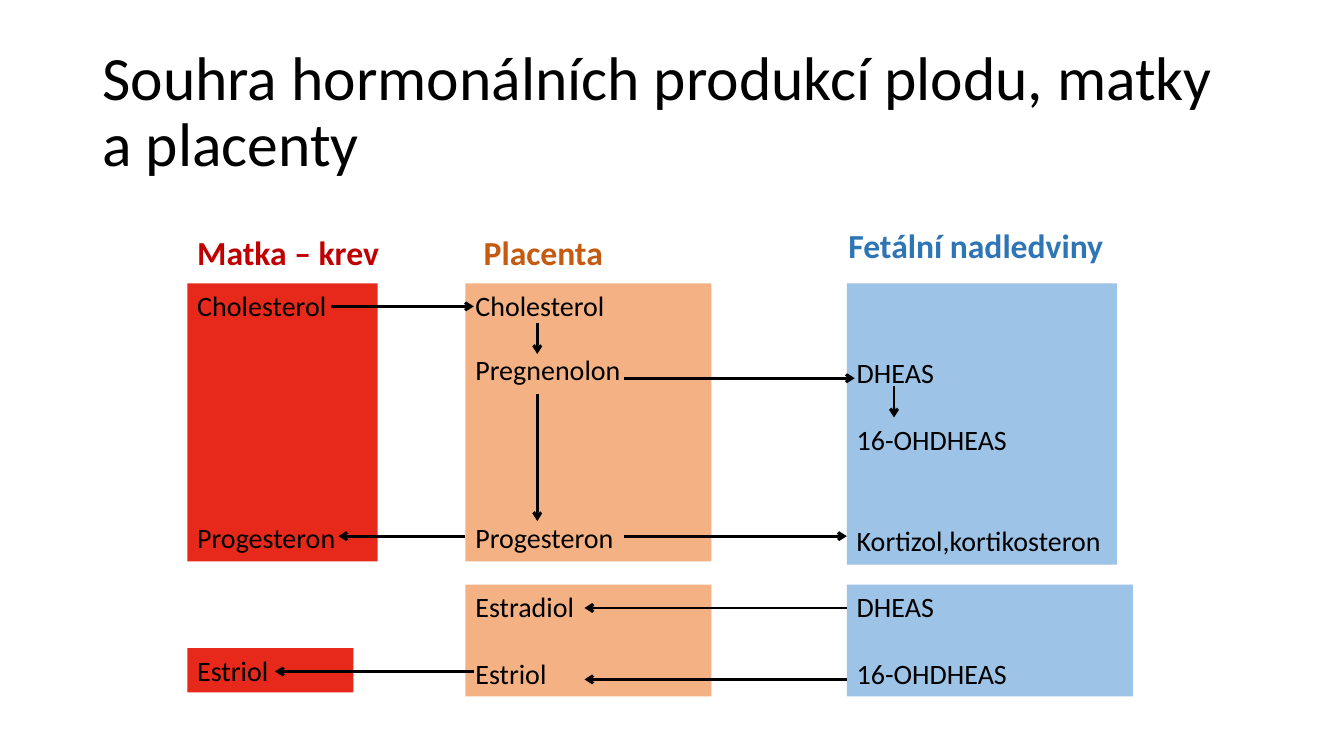
from dataclasses import dataclass

import pptx
import pptx.util
import pptx.dml.color
import pptx.enum.shapes
import pptx.enum.text
import pptx.oxml.ns
from lxml import etree

Cm = pptx.util.Cm
Pt = pptx.util.Pt


@dataclass(frozen=True)
class Theme:
    font: str = "Calibri"
    title_size: int = 44
    heading_size: int = 24
    body_size: int = 20
    line_width: int = 2
    line_pitch: int = 24
    black: str = "000000"
    mother: str = "E6291A"
    mother_heading: str = "C00000"
    placenta: str = "F4B183"
    placenta_heading: str = "C55A11"
    fetus: str = "9DC3E6"
    fetus_heading: str = "2E75B6"


THEME = Theme()

# Columns: left edges in cm
MOTHER, PLACENTA, FETUS = 4.72, 11.73, 21.34
UPPER, LOWER = 7.14, 14.73

# Heading: text, left, top, width, colour
HEADINGS = [
    ("Matka – krev", MOTHER, 5.72, 6.81, THEME.mother_heading),
    ("Placenta", 11.94, 5.72, 4.39, THEME.placenta_heading),
    ("Fetální nadledviny", 21.13, 5.54, 7.01, THEME.fetus_heading),
]

# Compartment: left, top, width, height, colour, hormones as (free lines above, name)
COMPARTMENTS = [
    (PLACENTA, UPPER, 6.2, 7.01, THEME.placenta,
     [(0, "Cholesterol"), (0.9, "Pregnenolon"), (4, "Progesteron")]),
    (PLACENTA, LOWER, 6.2, 2.82, THEME.placenta,
     [(0, "Estradiol"), (1, "Estriol")]),
    (FETUS, UPPER, 6.81, 7.09, THEME.fetus,
     [(2, "DHEAS"), (1, "16-OHDHEAS"), (2, "Kortizol,kortikosteron")]),
    (FETUS, LOWER, 7.21, 2.82, THEME.fetus,
     [(0, "DHEAS"), (1, "16-OHDHEAS")]),
    (MOTHER, UPPER, 4.8, 7.01, THEME.mother,
     [(0, "Cholesterol"), (5.9, "Progesteron")]),
    (MOTHER, 16.33, 4.19, 1.12, THEME.mother, [(0, "Estriol")]),
]

# Arrow: from x, from y, to x, to y
ARROWS = [
    (13.54, 8.13, 13.54, 8.92),
    (13.54, 9.93, 13.54, 13.13),
    (15.72, 9.53, 21.54, 9.53),
    (15.72, 13.51, FETUS, 13.51),
    (22.53, 9.73, 22.53, 10.52),
    (FETUS, 15.32, 14.73, 15.32),
    (FETUS, 17.12, 14.73, 17.12),
    (8.33, 7.72, 11.94, 7.72),
    (PLACENTA, 13.51, 8.53, 13.51),
    (11.94, 16.92, 6.93, 16.92),
]


def rgb(colour):
    return pptx.dml.color.RGBColor.from_string(colour)


def add_run(paragraph, text, size, colour=THEME.black, bold=False):
    paragraph.alignment = pptx.enum.text.PP_ALIGN.LEFT
    run = paragraph.add_run()
    run.text = text
    run.font.name = THEME.font
    run.font.size = Pt(size)
    run.font.bold = bold
    run.font.color.rgb = rgb(colour)


def add_label(slide, text, left, top, width, height, size, colour, bold=False):
    """Add a text box with one paragraph and return it."""
    label = slide.shapes.add_textbox(Cm(left), Cm(top), Cm(width), Cm(height))
    label.text_frame.word_wrap = True
    add_run(label.text_frame.paragraphs[0], text, size, colour, bold)
    return label


def add_title(slide, text):
    title = add_label(slide, text, 2.33, 1.02, 29.21, 3.68,
                      THEME.title_size, THEME.black)
    title.text_frame.vertical_anchor = pptx.enum.text.MSO_ANCHOR.MIDDLE
    title.text_frame.paragraphs[0].line_spacing = 0.9


def add_compartment(slide, left, top, width, height, colour, hormones):
    """Add a filled box whose hormones are spaced by free lines."""
    box = slide.shapes.add_shape(pptx.enum.shapes.MSO_SHAPE.RECTANGLE,
                                 Cm(left), Cm(top), Cm(width), Cm(height))
    box.shadow.inherit = False
    box.fill.solid()
    box.fill.fore_color.rgb = rgb(colour)
    box.line.fill.background()
    frame = box.text_frame
    frame.word_wrap = True
    frame.vertical_anchor = pptx.enum.text.MSO_ANCHOR.TOP
    for index, (free_lines, hormone) in enumerate(hormones):
        gap = Pt(free_lines * THEME.line_pitch)
        if index == 0:
            paragraph = frame.paragraphs[0]
            frame.margin_top = Cm(0.13) + gap
        else:
            paragraph = frame.add_paragraph()
            paragraph.space_before = gap
        add_run(paragraph, hormone, THEME.body_size)


def add_arrow(slide, from_x, from_y, to_x, to_y):
    arrow = slide.shapes.add_connector(
        pptx.enum.shapes.MSO_CONNECTOR.STRAIGHT,
        Cm(from_x), Cm(from_y), Cm(to_x), Cm(to_y))
    arrow.line.color.rgb = rgb(THEME.black)
    arrow.line.width = Pt(THEME.line_width)
    qn = pptx.oxml.ns.qn
    properties = arrow.element.spPr
    etree.SubElement(properties.find(qn("a:ln")), qn("a:tailEnd"), type="arrow")
    etree.SubElement(properties, qn("a:effectLst"))


def main():
    presentation = pptx.Presentation()
    presentation.slide_width = Cm(33.87)
    presentation.slide_height = Cm(19.05)
    slide = presentation.slides.add_slide(presentation.slide_layouts[6])
    add_title(slide, "Souhra hormonálních produkcí plodu, matky a placenty")
    for compartment in COMPARTMENTS:
        add_compartment(slide, *compartment)
    for text, left, top, width, colour in HEADINGS:
        add_label(slide, text, left, top, width, 1.3,
                  THEME.heading_size, colour, bold=True)
    for arrow in ARROWS:
        add_arrow(slide, *arrow)
    presentation.save("out.pptx")


if __name__ == "__main__":
    main()
